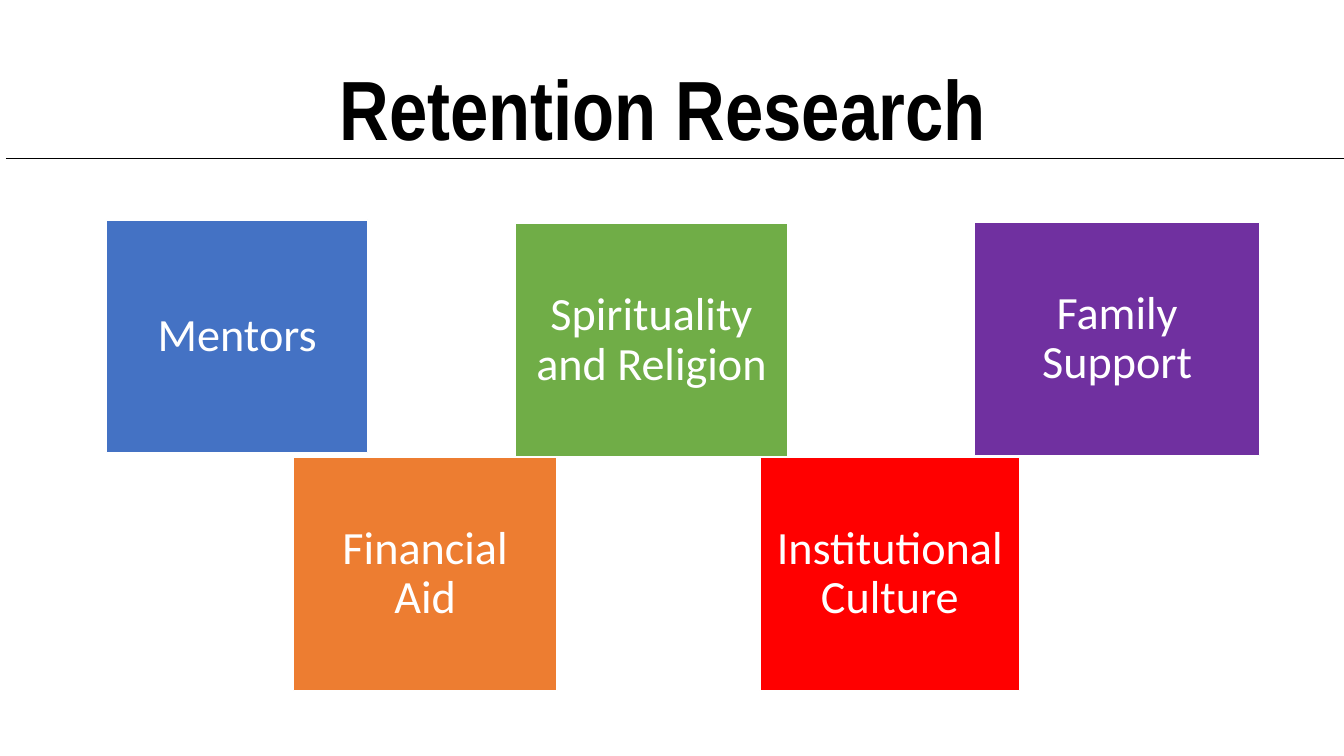
from pptx import Presentation, util as u
from pptx.dml.color import RGBColor
from pptx.enum import shapes, text
from lxml import etree

TITLE = "Retention Research "
TITLE_BOX = (2.34, 1.02, 29.21, 3.68)
RULE = (0.15, 3.99, 33.87, 3.99)
FACTOR_HEIGHT = 5.87
FACTORS = [
    ("Mentors", "4472C4", 2.69, 5.54, 6.58),
    ("Financial Aid", "ED7D31", 7.39, 11.53, 6.65),
    ("Spirituality and Religion", "70AD47", 12.98, 5.64, 6.88),
    ("Institutional Culture", "FF0000", 19.15, 11.53, 6.55),
    ("Family Support", "7030A0", 24.56, 5.61, 7.19),
]


def color(value):
    return RGBColor.from_string(value)


def write(shape, words, font_name, size, ink, margin, bold=False):
    frame = shape.text_frame
    frame.word_wrap = True
    frame.vertical_anchor = text.MSO_ANCHOR.MIDDLE
    frame.margin_left = frame.margin_right = u.Cm(margin)
    frame.margin_top = frame.margin_bottom = u.Cm(margin)
    paragraph = frame.paragraphs[0]
    paragraph.alignment = text.PP_ALIGN.CENTER
    paragraph.line_spacing = 0.9
    run = paragraph.add_run()
    run.text = words
    run.font.name = font_name
    run.font.size = u.Pt(size)
    run.font.bold = bold
    run.font.color.rgb = color(ink)


def add_factor(slide, name, fill, left, top, width):
    shape = slide.shapes.add_shape(
        shapes.MSO_SHAPE.RECTANGLE,
        u.Cm(left), u.Cm(top), u.Cm(width), u.Cm(FACTOR_HEIGHT))
    shape.shadow.inherit = False
    shape.fill.solid()
    shape.fill.fore_color.rgb = color(fill)
    shape.line.color.rgb = color("FFFFFF")
    shape.line.width = u.Pt(1)
    write(shape, name, "Calibri", 33, "FFFFFF", 0.35)


def add_rule(slide):
    rule = slide.shapes.add_connector(
        shapes.MSO_CONNECTOR.STRAIGHT, *map(u.Cm, RULE))
    rule.line.color.rgb = color("000000")
    rule.line.width = u.Pt(0.5)
    namespace = "http://schemas.openxmlformats.org/drawingml/2006/main"
    etree.SubElement(rule._element.spPr, f"{{{namespace}}}effectLst")


def main():
    """Build the slide of retention factors and save it."""
    presentation = Presentation()
    presentation.slide_width = u.Cm(33.87)
    presentation.slide_height = u.Cm(19.05)
    slide = presentation.slides.add_slide(presentation.slide_layouts[6])
    title = slide.shapes.add_textbox(*map(u.Cm, TITLE_BOX))
    write(title, TITLE, "Arial Narrow", 60, "000000", 0.13, bold=True)
    for factor in FACTORS:
        add_factor(slide, *factor)
    add_rule(slide)
    presentation.save("out.pptx")


if __name__ == "__main__":
    main()
